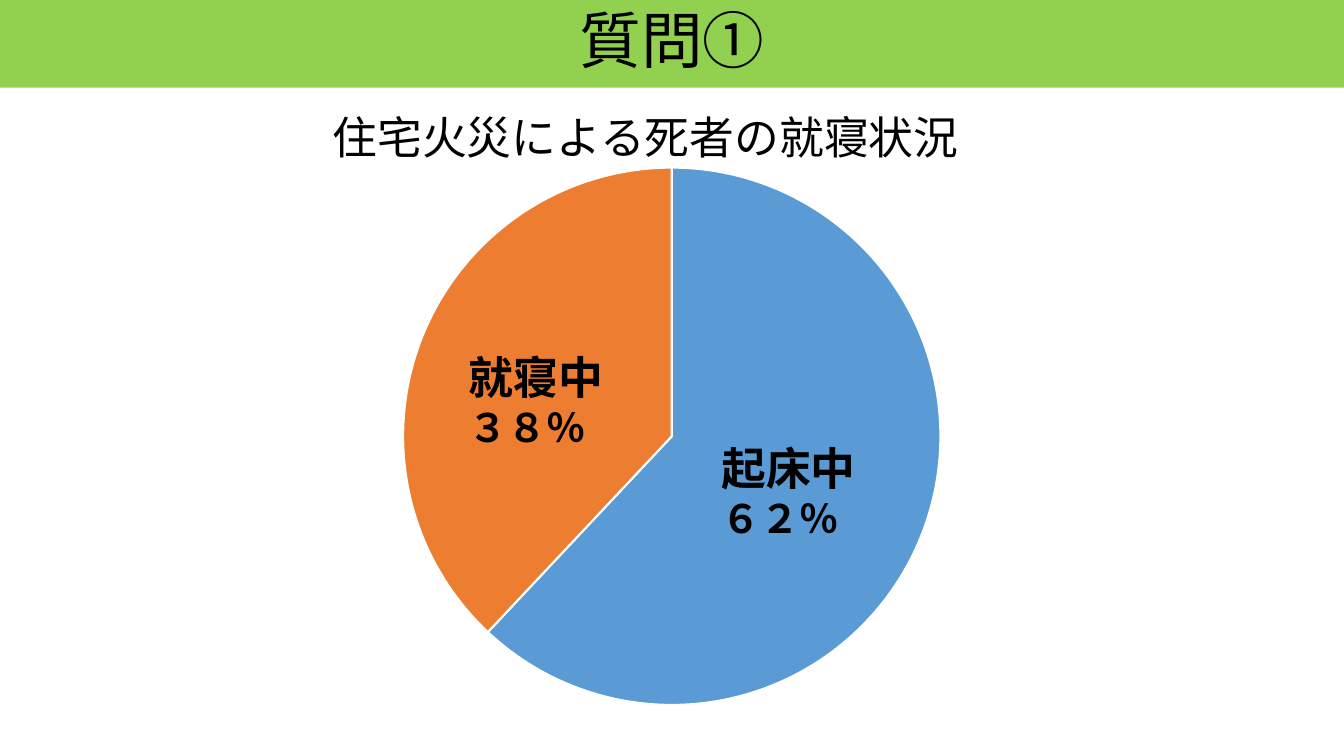
from lxml.etree import SubElement
from pptx import Presentation
from pptx.chart.data import CategoryChartData
from pptx.dml.color import RGBColor
from pptx.enum.chart import XL_CHART_TYPE
from pptx.enum.shapes import MSO_SHAPE
from pptx.enum.text import MSO_ANCHOR, MSO_AUTO_SIZE, PP_ALIGN
from pptx.oxml import parse_xml
from pptx.oxml.ns import nsdecls, qn
from pptx.util import Cm, Pt

FONT = "Noto Sans CJK JP"
BLACK = RGBColor(0x00, 0x00, 0x00)
WHITE = RGBColor(0xFF, 0xFF, 0xFF)
GREEN = RGBColor(0x92, 0xD0, 0x50)
BLUE = RGBColor(0x5B, 0x9B, 0xD5)
ORANGE = RGBColor(0xED, 0x7D, 0x31)

# Content: lengths in cm, text lines as (wording, format)
SLIDE_SIZE = (33.87, 19.05)
BANNER_HEIGHT = 2.21
BANNER = ("質問①", {"size": Pt(44)})
LARGE_BOLD = {"size": Pt(32), "bold": True}
SMALL_BOLD = {"size": Pt(28), "bold": True}
CAPTIONS = [
    ((11.56, 8.69, 3.94, 2.82), [("就寝中", LARGE_BOLD), ("３８％", SMALL_BOLD)]),
    ((17.93, 10.97, 3.94, 2.82), [("起床中", LARGE_BOLD), ("６２％", SMALL_BOLD)]),
    ((8.13, 2.64, 16.36, 1.63), [("住宅火災による死者の就寝状況", {"size": Pt(32)})]),
]
SLICES = [("1", 62, BLUE), ("2", 38, ORANGE)]
PIE_FRAME = (6.02, 3.86, 21.82, 14.27)
PIE_DIAMETER = 13.54


def write_line(paragraph, wording, style):
    run = paragraph.add_run()
    run.text = wording
    for name, value in {"name": FONT, **style}.items():
        setattr(run.font, name, value)
    run.font.color.rgb = BLACK
    SubElement(run.font._element, qn("a:ea"), typeface=FONT)


def add_banner(slide):
    banner = slide.shapes.add_shape(
        MSO_SHAPE.RECTANGLE, 0, 0, Cm(SLIDE_SIZE[0]), Cm(BANNER_HEIGHT))
    banner.shadow.inherit = False
    banner.fill.solid()
    banner.fill.fore_color.rgb = GREEN
    banner.line.fill.background()
    banner.text_frame.vertical_anchor = MSO_ANCHOR.MIDDLE
    heading = banner.text_frame.paragraphs[0]
    heading.alignment = PP_ALIGN.CENTER
    heading.line_spacing = 0.9
    write_line(heading, *BANNER)


def add_pie(slide):
    sleep_data = CategoryChartData()
    sleep_data.categories = [name for name, _, _ in SLICES]
    sleep_data.add_series("Series 1", [share for _, share, _ in SLICES])
    pie = slide.shapes.add_chart(
        XL_CHART_TYPE.PIE, *map(Cm, PIE_FRAME), sleep_data).chart
    pie.has_legend = False
    pie.has_title = False
    pie.font.name = FONT
    pie.font.size = Pt(10)
    pie.font.color.rgb = BLACK
    pie.plots[0].vary_by_categories = True
    for index, (_, _, color) in enumerate(SLICES):
        wedge = pie.plots[0].series[0].points[index].format
        wedge.fill.solid()
        wedge.fill.fore_color.rgb = color
        wedge.line.color.rgb = WHITE
        wedge.line.width = Pt(1.5)

    # Centre the circle in the chart frame
    width, height = (round(PIE_DIAMETER / side, 3) for side in PIE_FRAME[2:])
    places = {"x": (1 - width) / 2, "y": (1 - height) / 2, "w": width, "h": height}
    plot_area = pie._chartSpace.chart.plotArea
    for layout in plot_area.findall(qn("c:layout")):
        plot_area.remove(layout)
    modes = "".join(f'<c:{axis}Mode val="edge"/>' for axis in "xy")
    sizes = "".join(f'<c:{key} val="{part:.4f}"/>' for key, part in places.items())
    plot_area.insert(0, parse_xml(
        f'<c:layout {nsdecls("c")}><c:manualLayout><c:layoutTarget val="inner"/>'
        f'{modes}{sizes}</c:manualLayout></c:layout>'))


def add_caption(slide, place, lines):
    frame = slide.shapes.add_textbox(*map(Cm, place)).text_frame
    frame.word_wrap = False
    frame.auto_size = MSO_AUTO_SIZE.SHAPE_TO_FIT_TEXT
    for index, (wording, style) in enumerate(lines):
        paragraph = frame.add_paragraph() if index else frame.paragraphs[0]
        write_line(paragraph, wording, style)


def main():
    deck = Presentation()
    deck.slide_width, deck.slide_height = map(Cm, SLIDE_SIZE)
    slide = deck.slides.add_slide(deck.slide_layouts[6])
    add_banner(slide)
    add_pie(slide)
    for place, lines in CAPTIONS:
        add_caption(slide, place, lines)
    deck.save("out.pptx")


if __name__ == "__main__":
    main()
